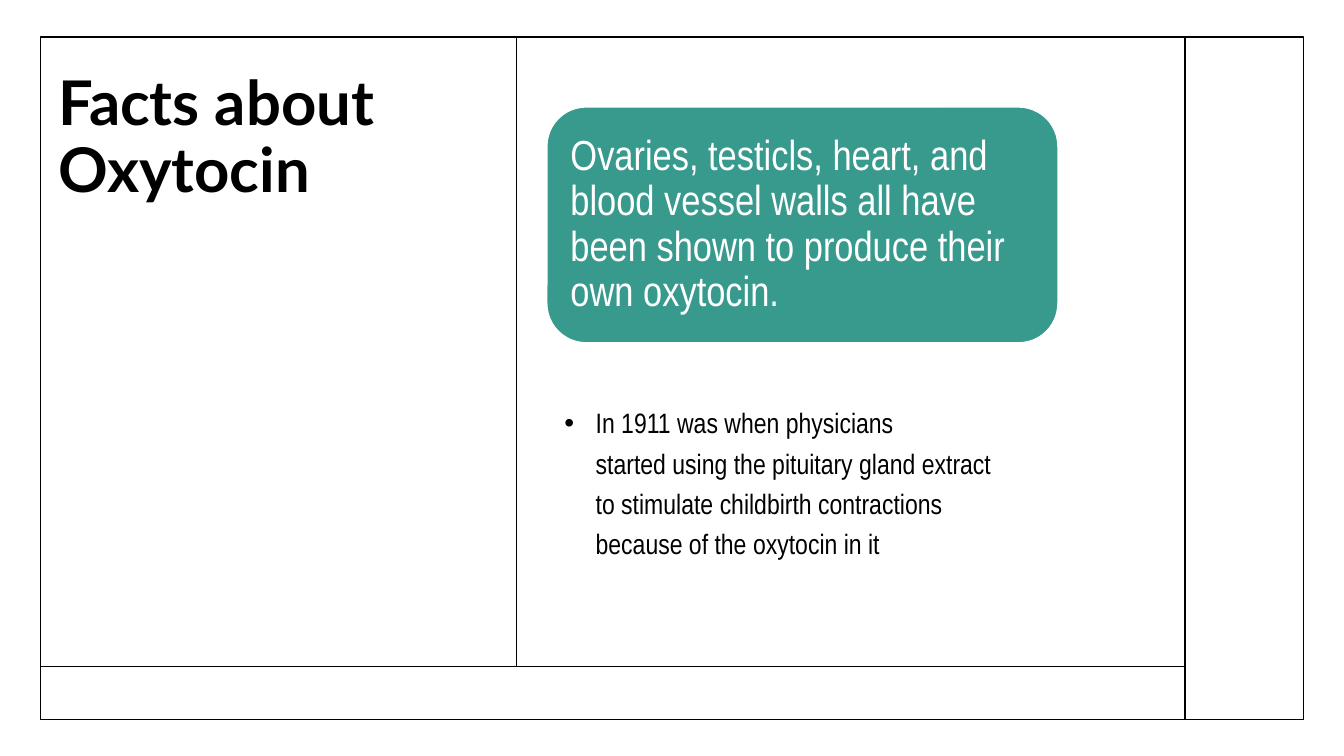
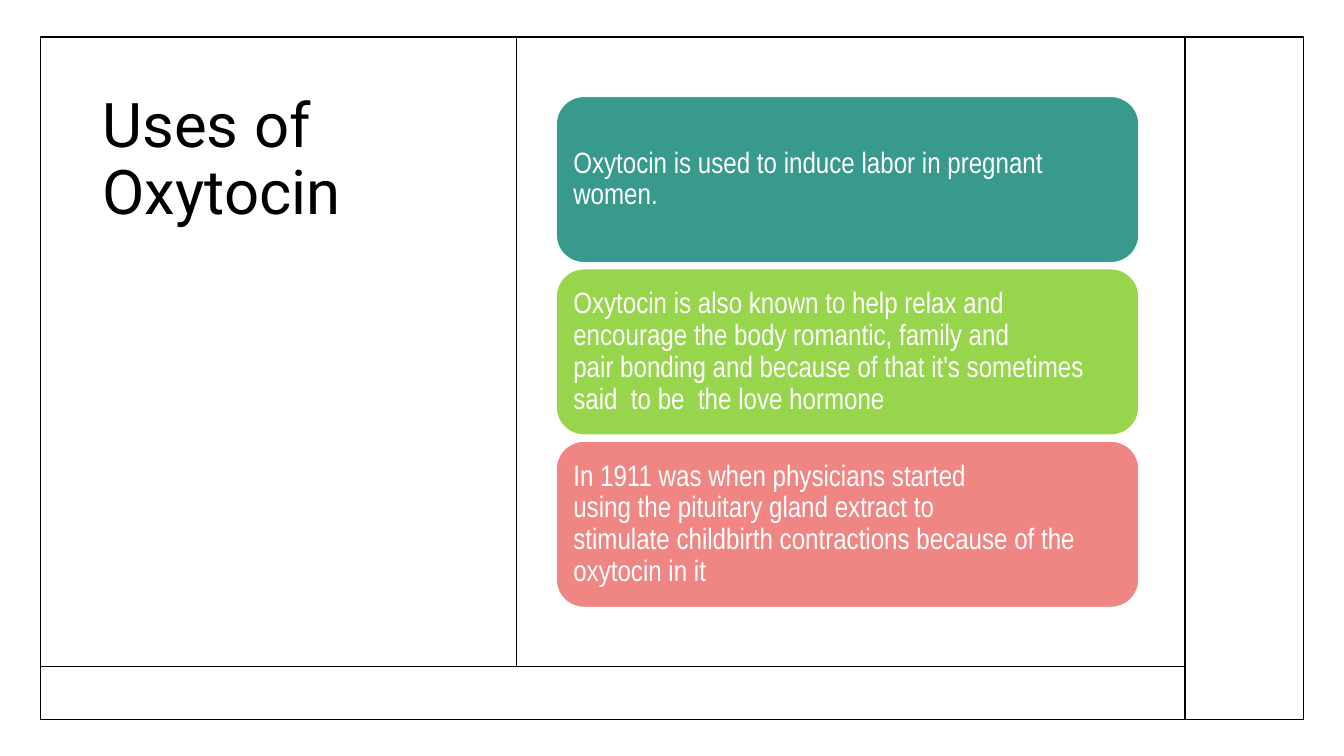
"""Build two slides about oxytocin: its facts and its uses."""
from lxml import etree
from pptx import Presentation
from pptx.dml.color import RGBColor
from pptx.enum.shapes import MSO_CONNECTOR, MSO_SHAPE
from pptx.enum.text import MSO_ANCHOR, PP_ALIGN
from pptx.oxml.ns import qn
from pptx.util import Inches, Pt

RECT, ROUND = MSO_SHAPE.RECTANGLE, MSO_SHAPE.ROUNDED_RECTANGLE
LINE = MSO_CONNECTOR.STRAIGHT
TOP, MID, LOW = MSO_ANCHOR.TOP, MSO_ANCHOR.MIDDLE, MSO_ANCHOR.BOTTOM
LEFT = PP_ALIGN.LEFT

INK = {name: RGBColor.from_string(code) for name, code in {
    "black": "000000", "white": "FFFFFF", "teal": "38998D",
    "lime": "97D54D", "coral": "EF8683"}.items()}
BODY = "Arial Narrow"
TIE, HARD = "~", chr(160)

deck = Presentation()
deck.slide_width, deck.slide_height = Inches(13.33), Inches(7.5)
COL, ROW = deck.slide_width / 100, deck.slide_height / 100

X0, X1, X2, X3 = 3, 38.43, 88.18, 97
Y0, Y1, Y2 = 4.9, 88.13, 95.15
RULES = [(X0, Y1, X2, Y1), (X1, Y0, X1, Y1), (X2, Y0, X2, Y2)]

TITLES = [
    ("Facts about Oxytocin", "Lato", True, LOW, (3.6, Y0, 31.73, 22.93)),
    ("Uses of Oxytocin", "Roboto", False, TOP, (6.9, 11.87, 28.13, 69.47)),
]
FACT = "Ovaries, testicls, heart, and blood vessel walls all have been shown to produce their own~oxytocin."
NOTE = "In 1911 was~when~physicians started~using~the~pituitary~gland extract to~stimulate~childbirth contractions because of the~oxytocin in it"
USES = [
    ("teal", "Oxytocin~is used to induce~labor~in pregnant women."),
    ("lime", "Oxytocin is also~known to help~relax and encourage~the body romantic, family and pair~bonding and because of that it's sometimes said~ to be~ the love hormone"),
    ("coral", "In 1911 was~when~physicians started using~the~pituitary~gland extract to stimulate~childbirth contractions because of the oxytocin in it"),
]
CARDS = [
    [("teal", FACT, 30, 0.12, (40.69, 14.15, 38.03, 31.2))],
    [(hue, text, 21, 0.09, (41.38, 12.75 + 22.8 * i, 43.36, 22))
     for i, (hue, text) in enumerate(USES)],
]


def place(x, y, w, h):
    return [round(n) for n in (x * COL, y * ROW, w * COL, h * ROW)]


def write(shape, text, size, face, hue, anchor, gap=0.9):
    frame = shape.text_frame
    frame.word_wrap = True
    frame.vertical_anchor = anchor
    para = frame.paragraphs[0]
    para.text = text.replace(TIE, HARD)
    para.alignment = LEFT
    para.line_spacing = gap
    para.font.size, para.font.name = Pt(size), face
    para.font.color.rgb = INK[hue]
    return para


for (head, face, bold, anchor, area), cards in zip(TITLES, CARDS):
    slide = deck.slides.add_slide(deck.slide_layouts[6])
    shapes = slide.shapes

    edge = shapes.add_shape(RECT, *place(X0, Y0, X3 - X0, Y2 - Y0))
    edge.shadow.inherit = False
    edge.fill.background()
    edge.line.color.rgb, edge.line.width = INK["black"], Pt(1)

    title = write(shapes.add_textbox(*place(*area)), head, 44, face, "black", anchor)
    title.font.bold = bold

    for ends in RULES:
        rule = shapes.add_connector(LINE, *place(*ends))
        rule.line.color.rgb, rule.line.width = INK["black"], Pt(1)
        etree.SubElement(rule._element.spPr, qn("a:effectLst"))

    for hue, text, size, inset, area in cards:
        card = shapes.add_shape(ROUND, *place(*area))
        card.shadow.inherit = False
        card.fill.solid()
        card.fill.fore_color.rgb = INK[hue]
        card.line.color.rgb, card.line.width = INK["white"], Pt(1)
        frame = card.text_frame
        frame.margin_left = frame.margin_right = Inches(inset)
        frame.margin_top = frame.margin_bottom = Inches(inset)
        write(card, text, size, BODY, "white", MID)

note = deck.slides[0].shapes.add_textbox(*place(41.26, 52.13, 34.2, 32.8))
item = write(note, NOTE, 20, BODY, "black", TOP, 1.2)
item.space_before = Pt(10)
props = item._p.get_or_add_pPr()
props.set("marL", str(Inches(0.31)))
props.set("indent", str(-Inches(0.31)))
face = etree.Element(qn("a:buFont"), typeface="Arial")
mark = etree.Element(qn("a:buChar"), char="•")
spot = props.index(props.find(qn("a:spcBef"))) + 1
props[spot:spot] = [face, mark]

deck.save("out.pptx")
